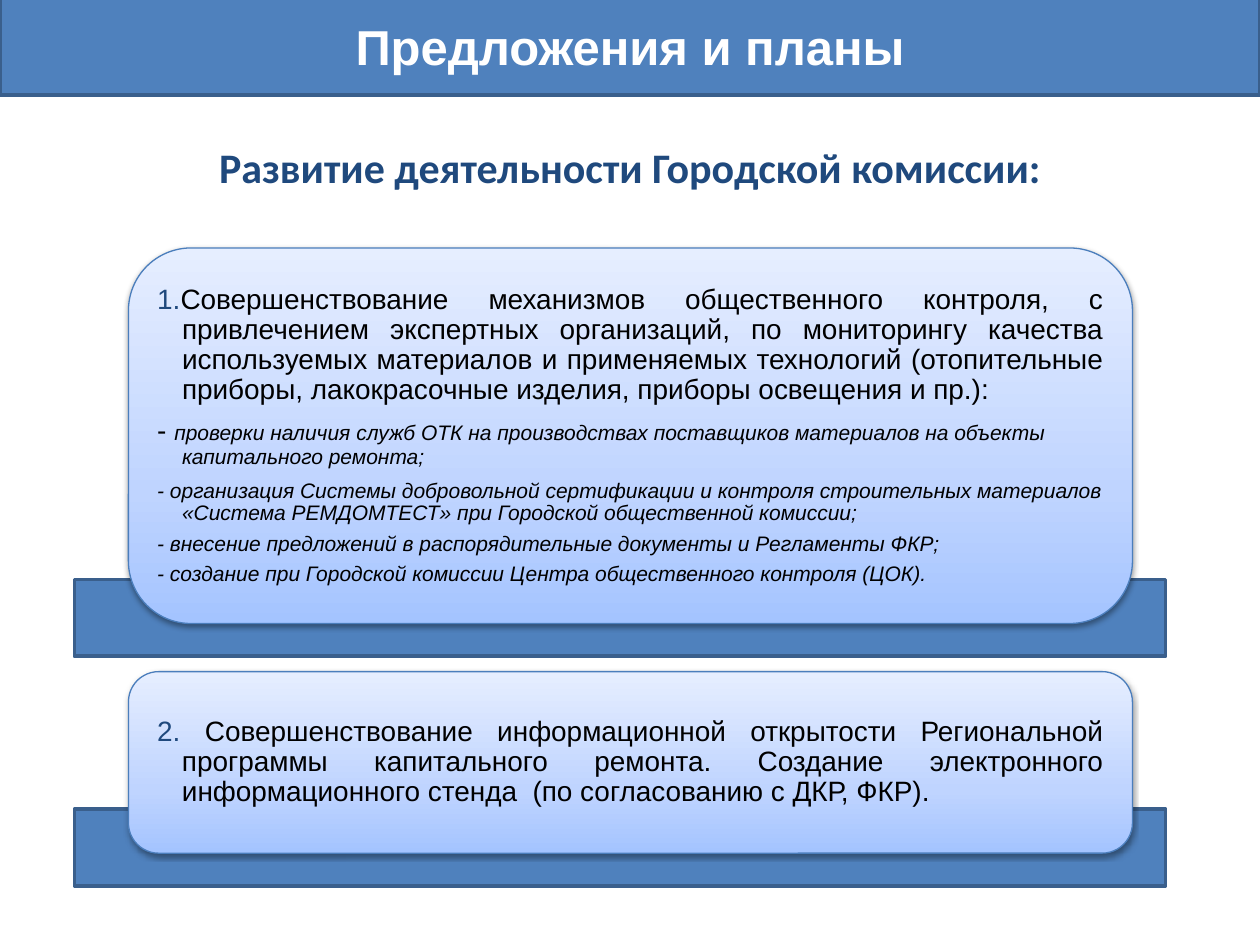
from copy import deepcopy

from lxml import etree
from pptx import Presentation
from pptx.dml.color import RGBColor
from pptx.enum.shapes import MSO_SHAPE as Shape
from pptx.enum.text import MSO_ANCHOR as Anchor, PP_ALIGN as Align
from pptx.oxml import parse_xml
from pptx.oxml.ns import nsdecls, qn
from pptx.util import Cm, Pt

BLUE = RGBColor(0x4F, 0x81, 0xBD)
BLUE_EDGE = RGBColor(0x3A, 0x5F, 0x8C)
CARD_EDGE = RGBColor(0x4B, 0x7E, 0xBC)
NAVY = RGBColor(0x1F, 0x49, 0x7D)
WHITE = RGBColor(0xFF, 0xFF, 0xFF)
BLACK = RGBColor(0, 0, 0)
CARD_STOPS = [
    (0, RGBColor(0xA4, 0xC4, 0xFF)),
    (0.35, RGBColor(0xBF, 0xD4, 0xFF)),
    (1, RGBColor(0xE6, 0xEE, 0xFF)),
]

BAR_LEFT, BAR_WIDTH, BAR_HEIGHT = 1.5, 22, 1.55
CARD_LEFT, CARD_WIDTH = 2.59, 20.24
BAR_OVERLAP = 0.89
TEXT_MARGIN = 0.58
HANGING = 0.5
CORNER_INSET = 0.0488  # text inset of a default rounded corner, per height

# Each paragraph: alignment, space after, runs of (text, size, italic, colour)
FIRST_CARD = [
    (Align.JUSTIFY, 6, [
        ("1.", 16, False, NAVY),
        ("Совершенствование механизмов общественного контроля, с привлечением "
         "экспертных организаций, по мониторингу качества используемых материалов "
         "и применяемых технологий (отопительные приборы, лакокрасочные изделия, "
         "приборы освещения и пр.):", 16, False, BLACK)]),
    (Align.LEFT, 6, [
        ("- ", 16, False, BLACK),
        ("проверки наличия служб ОТК на производствах поставщиков материалов "
         "на объекты капитального ремонта;", 12, True, BLACK)]),
] + [(Align.LEFT, 4.5, [(text, 12, True, BLACK)]) for text in (
    "- организация Системы добровольной сертификации и контроля строительных "
    "материалов «Система РЕМДОМТЕСТ» при Городской общественной комиссии;",
    "- внесение предложений в распорядительные документы и Регламенты ФКР;",
    "- создание при Городской комиссии Центра общественного контроля (ЦОК).",
)]
SECOND_CARD = [
    (Align.JUSTIFY, 0, [
        ("2. ", 16, False, NAVY),
        ("Совершенствование информационной открытости Региональной программы "
         "капитального ремонта. Создание электронного информационного стенда  "
         "(по согласованию с ДКР, ФКР).", 16, False, BLACK)]),
]


def add_bar(slide, left, top, width, height):
    bar = slide.shapes.add_shape(
        Shape.RECTANGLE, Cm(left), Cm(top), Cm(width), Cm(height))
    bar.shadow.inherit = False
    bar.fill.solid()
    bar.fill.fore_color.rgb = BLUE
    bar.line.color.rgb = BLUE_EDGE
    bar.line.width = Pt(2)
    return bar


def set_heading(paragraph, text, font_name, size, color):
    paragraph.text = text
    paragraph.alignment = Align.CENTER
    paragraph.font.name = font_name
    paragraph.font.size = Pt(size)
    paragraph.font.bold = True
    paragraph.font.color.rgb = color


def fill_gradient(shape):
    shape.fill.gradient()
    shape.fill.gradient_angle = 90
    stop_list = shape.element.spPr.find(".//" + qn("a:gsLst"))
    stop_list.insert(1, deepcopy(stop_list[0]))
    for stop, (position, color) in zip(shape.fill.gradient_stops, CARD_STOPS):
        stop.position = position
        stop.color.rgb = color


def add_shadow(shape):
    shape.shadow.inherit = False
    shape.element.spPr.find(qn("a:effectLst")).append(parse_xml(
        f'<a:outerShdw {nsdecls("a")} blurRad="{Pt(3.1)}" dist="{Pt(1.6)}" '
        'dir="5400000" rotWithShape="0"><a:srgbClr val="000000">'
        '<a:alpha val="38000"/></a:srgbClr></a:outerShdw>'))


def set_hanging_indent(paragraph):
    properties = paragraph._p.get_or_add_pPr()
    properties.set("marL", str(Cm(HANGING)))
    properties.set("indent", str(-Cm(HANGING)))
    etree.SubElement(properties, qn("a:buNone"))


def write_paragraphs(frame, paragraphs):
    for index, (alignment, space_after, runs) in enumerate(paragraphs):
        paragraph = frame.add_paragraph() if index else frame.paragraphs[0]
        paragraph.alignment = alignment
        paragraph.line_spacing = 0.9
        paragraph.space_after = Pt(space_after)
        set_hanging_indent(paragraph)
        for text, size, italic, color in runs:
            run = paragraph.add_run()
            run.text = text
            run.font.name = "Arial"
            run.font.size = Pt(size)
            run.font.italic = italic
            run.font.color.rgb = color


def add_card(slide, top, height, paragraphs):
    # Bar that shows below the card
    add_bar(slide, BAR_LEFT, top + height - BAR_OVERLAP, BAR_WIDTH, BAR_HEIGHT)
    card = slide.shapes.add_shape(
        Shape.ROUNDED_RECTANGLE, Cm(CARD_LEFT), Cm(top), Cm(CARD_WIDTH), Cm(height))
    fill_gradient(card)
    card.line.color.rgb = CARD_EDGE
    card.line.width = Pt(0.75)
    add_shadow(card)
    frame = card.text_frame
    frame.word_wrap = True
    frame.vertical_anchor = Anchor.MIDDLE
    frame.margin_left = frame.margin_right = Cm(TEXT_MARGIN - CORNER_INSET * height)
    frame.margin_top = frame.margin_bottom = 0
    write_paragraphs(frame, paragraphs)


def add_title(slide):
    banner = add_bar(slide, 0, -0.08, 25.4, 2)
    banner.text_frame.vertical_anchor = Anchor.MIDDLE
    set_heading(banner.text_frame.paragraphs[0], "Предложения и планы",
                "Arial", 28, WHITE)


def add_subtitle(slide):
    box = slide.shapes.add_textbox(Cm(1.27), Cm(2.72), Cm(22.86), Cm(13.8))
    box.text_frame.word_wrap = True
    paragraph = box.text_frame.paragraphs[0]
    set_heading(paragraph, "Развитие деятельности Городской комиссии:",
                "Calibri", 24, NAVY)
    paragraph.space_before = Pt(5)


def main():
    presentation = Presentation()
    presentation.slide_width, presentation.slide_height = Cm(25.4), Cm(19.05)
    slide = presentation.slides.add_slide(presentation.slide_layouts[6])

    # Cards, then the headings above them
    add_card(slide, 5, 7.57, FIRST_CARD)
    add_card(slide, 13.54, 3.66, SECOND_CARD)
    add_title(slide)
    add_subtitle(slide)

    presentation.save("out.pptx")


if __name__ == "__main__":
    main()
